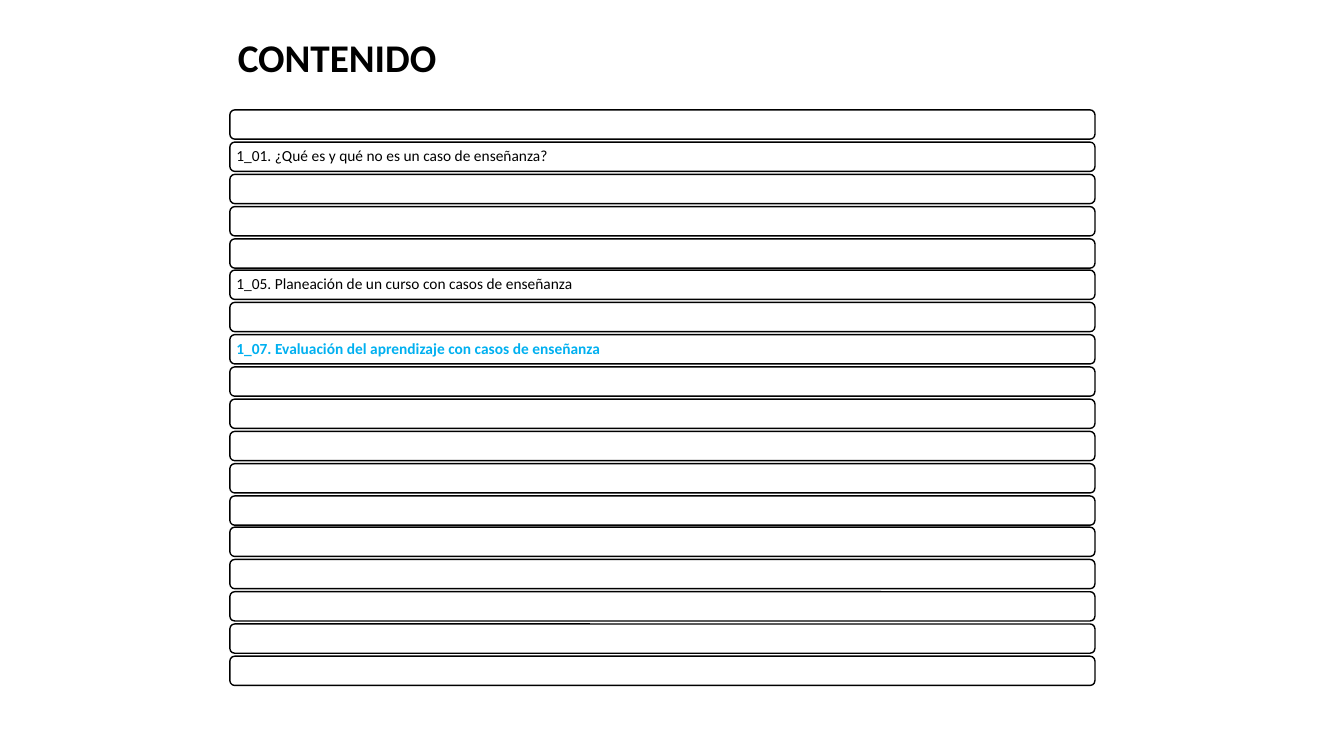
from pptx import Presentation
from pptx.dml.color import RGBColor
from pptx.enum.shapes import MSO_SHAPE as Shape
from pptx.enum.text import MSO_ANCHOR as Anchor, MSO_AUTO_SIZE as AutoSize, PP_ALIGN as Align
from pptx.util import Pt

EMU_PER_PX = 9144
BLACK = RGBColor(0x00, 0x00, 0x00)
WHITE = RGBColor(0xFF, 0xFF, 0xFF)
CYAN = RGBColor(0x00, 0xB0, 0xF0)
FONT = "Calibri"

ROW_COUNT = 18
FIRST_TOP, LAST_TOP = 109, 651
TOPICS = {
    1: "1_01. ¿Qué es y qué no es un caso de enseñanza?",
    5: "1_05. Planeación de un curso con casos de enseñanza",
    7: "1_07. Evaluación del aprendizaje con casos de enseñanza",
}
CURRENT_TOPIC = 7


def px(length):
    return length * EMU_PER_PX


def write(frame, text, size, color, bold):
    para = frame.paragraphs[0]
    para.text = text
    para.alignment = Align.LEFT
    para.font.name = FONT
    para.font.size = Pt(size)
    para.font.bold = bold
    para.font.color.rgb = color
    return para


def add_title(page, text):
    box = page.shapes.add_textbox(px(226), px(28), px(219), px(57))
    frame = box.text_frame
    frame.word_wrap = False
    frame.auto_size = AutoSize.SHAPE_TO_FIT_TEXT
    write(frame, text, 28, BLACK, True)


def add_bar(page, top):
    bar = page.shapes.add_shape(Shape.ROUNDED_RECTANGLE, px(228), px(top), px(858), px(29))
    bar.shadow.inherit = False
    bar.fill.solid()
    bar.fill.fore_color.rgb = WHITE
    bar.line.color.rgb = BLACK
    bar.line.width = Pt(1)
    return bar


def label_bar(bar, text, current):
    frame = bar.text_frame
    frame.word_wrap = True
    frame.vertical_anchor = Anchor.MIDDLE
    frame.margin_left = frame.margin_right = px(5)
    frame.margin_top = frame.margin_bottom = px(5)
    para = write(frame, text, 11, CYAN if current else BLACK, current)
    para.line_spacing = 0.9


def main():
    deck = Presentation()
    deck.slide_width, deck.slide_height = px(1333), px(750)
    page = deck.slides.add_slide(deck.slide_layouts[6])

    for row in range(ROW_COUNT):
        top = FIRST_TOP + round(row * (LAST_TOP - FIRST_TOP) / (ROW_COUNT - 1))
        bar = add_bar(page, top)
        if row in TOPICS:
            label_bar(bar, TOPICS[row], row == CURRENT_TOPIC)
    add_title(page, "CONTENIDO")

    deck.save("out.pptx")


if __name__ == "__main__":
    main()
